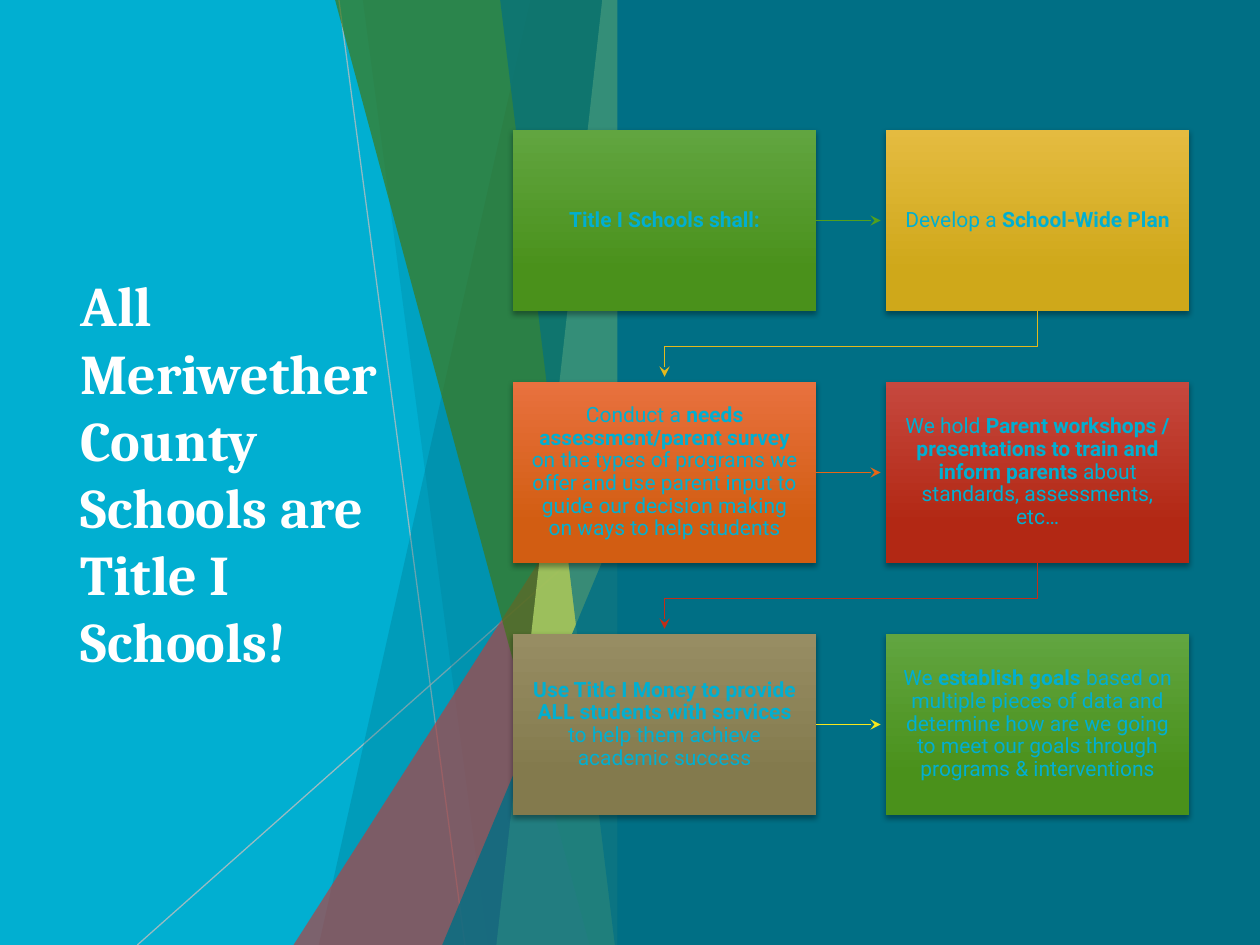
from dataclasses import dataclass

from lxml import etree
from pptx import Presentation
from pptx.dml.color import RGBColor
from pptx.enum.shapes import MSO_CONNECTOR as Conn, MSO_SHAPE as Shape
from pptx.enum.text import MSO_ANCHOR as Anchor, PP_ALIGN as Align
from pptx.oxml.ns import qn
from pptx.util import Inches, Pt

CYAN = RGBColor(0x01, 0xAF, 0xD1)
TEAL = RGBColor(0x00, 0x6F, 0x85)
WHITE = RGBColor(0xFF, 0xFF, 0xFF)
GRAY = RGBColor(0xBF, 0xBF, 0xBF)
ROSE = RGBColor(0xAF, 0x43, 0x45)
FOREST = RGBColor(0x3F, 0x78, 0x18)
LIME = RGBColor(0xBF, 0xE4, 0x71)
GREEN = RGBColor(0x52, 0xA0, 0x1E)
GREEN_TOP, GREEN_LOW = RGBColor(0x61, 0xA5, 0x40), RGBColor(0x4A, 0x91, 0x1B)
GOLD = RGBColor(0xE4, 0xB9, 0x1D)
GOLD_TOP, GOLD_LOW = RGBColor(0xE4, 0xBB, 0x40), RGBColor(0xCF, 0xA8, 0x1A)
ORANGE = RGBColor(0xE7, 0x66, 0x15)
ORANGE_TOP, ORANGE_LOW = RGBColor(0xE8, 0x71, 0x3E), RGBColor(0xD2, 0x5D, 0x12)
RED = RGBColor(0xC4, 0x2D, 0x17)
RED_TOP, RED_LOW = RGBColor(0xC6, 0x48, 0x3E), RGBColor(0xB2, 0x28, 0x14)
YELLOW = RGBColor(0xF8, 0xE7, 0x1C)
KHAKI_TOP, KHAKI_LOW = RGBColor(0x97, 0x8D, 0x63), RGBColor(0x83, 0x7A, 0x4D)

SLIDE_W, SLIDE_H = 10, 7.5
FACET_RIGHT = 5
BOX_W, BOX_H = 2.41, 1.44
GRID_LEFT, GRID_TOP = 4.07, 1.03
COL_STEP, ROW_STEP = 2.96, 2
ARROW_GAP = 0.04


@dataclass
class Ray:
    x1: float
    y1: float
    x2: float
    y2: float
    opacity: int


@dataclass
class Facet:
    """Band from a slanted left edge to the common right edge."""
    top_x: float
    bottom_x: float
    color: RGBColor
    opacity: int


@dataclass
class Spike:
    """Right triangle standing on the bottom of the slide."""
    left: float
    top: float
    color: RGBColor
    opacity: int


@dataclass
class Step:
    runs: list[tuple[str, bool]]
    top_color: RGBColor
    low_color: RGBColor
    arrow: RGBColor | None = None


RAYS = [Ray(2.69, 0, 3.69, 7.5, 74), Ray(5, 4.03, 1.09, 7.5, 80)]
BACKDROP = [
    Facet(4.21, 2.53, TEAL, 29),
    Facet(2.88, 3.87, TEAL, 20),
    Spike(2.33, 3.33, ROSE, 71),
    Facet(2.66, 4.68, FOREST, 69),
    Facet(4.78, 3.94, LIME, 69),
    Facet(3.97, 4.88, TEAL, 64),
    Spike(3.51, 3.93, TEAL, 80),
]
STEPS = [
    Step([("Title I Schools shall:", True)], GREEN_TOP, GREEN_LOW, GREEN),
    Step([("Develop a ", False), ("School-Wide Plan", True)], GOLD_TOP, GOLD_LOW, GOLD),
    Step([("Conduct a ", False), ("needs assessment/parent survey ", True),
          ("on the types of programs we offer and use parent input to guide "
           "our decision making on ways to help students", False)],
         ORANGE_TOP, ORANGE_LOW, ORANGE),
    Step([("We hold ", False),
          ("Parent workshops / presentations to train and inform parents", True),
          (" about standards, assessments, etc…", False)], RED_TOP, RED_LOW, RED),
    Step([("Use Title I Money to provide ALL students with services", True),
          (" to help them achieve academic success", False)],
         KHAKI_TOP, KHAKI_LOW, YELLOW),
    Step([("We ", False), ("establish goals", True),
          (" based on multiple pieces of data and determine how are we going "
           "to meet our goals through programs & interventions", False)],
         GREEN_TOP, GREEN_LOW),
]


def set_opacity(sp, percent: int) -> None:
    color = sp._element.spPr.find(".//" + qn("a:srgbClr"))
    etree.SubElement(color, qn("a:alpha"), val=str(percent * 1000))


def paint(sp, color: RGBColor, opacity: int = 100) -> None:
    sp.shadow.inherit = False
    sp.fill.solid()
    sp.fill.fore_color.rgb = color
    sp.line.fill.background()
    if opacity < 100:
        set_opacity(sp, opacity)


def add_path(s, points: list[tuple[float, float]], close: bool):
    emu = [(Inches(x), Inches(y)) for x, y in points]
    builder = s.shapes.build_freeform(*emu[0])
    builder.add_line_segments(emu[1:], close=close)
    return builder.convert_to_shape()


def add_line(s, x1: float, y1: float, x2: float, y2: float):
    line = s.shapes.add_connector(Conn.STRAIGHT, Inches(x1), Inches(y1), Inches(x2), Inches(y2))
    etree.SubElement(line._element.spPr, qn("a:effectLst"))
    return line


def add_ray(s, ray: Ray) -> None:
    line = add_line(s, ray.x1, ray.y1, ray.x2, ray.y2)
    line.line.color.rgb = GRAY
    line.line.width = Pt(0.75)
    set_opacity(line, ray.opacity)


def add_backdrop_piece(s, piece: Facet | Spike) -> None:
    if isinstance(piece, Facet):
        sp = add_path(s, [(piece.top_x, 0), (FACET_RIGHT, 0), (FACET_RIGHT, SLIDE_H),
                          (piece.bottom_x, SLIDE_H)], close=True)
    else:
        sp = s.shapes.add_shape(Shape.ISOSCELES_TRIANGLE, Inches(piece.left), Inches(piece.top),
                                Inches(FACET_RIGHT - piece.left), Inches(SLIDE_H - piece.top))
        sp.adjustments[0] = 1
    paint(sp, piece.color, piece.opacity)


def add_title(s, text: str) -> None:
    tf = s.shapes.add_textbox(Inches(0.54), Inches(1.51), Inches(2.91), Inches(4.48)).text_frame
    tf.word_wrap = True
    tf.vertical_anchor = Anchor.MIDDLE
    tf.text = text
    font = tf.paragraphs[0].runs[0].font
    font.name, font.size, font.bold = "Cambria", Pt(32), True
    font.color.rgb = WHITE


def add_box(s, step: Step, x: float, y: float):
    sp = s.shapes.add_shape(Shape.RECTANGLE, Inches(x), Inches(y), Inches(BOX_W), Inches(BOX_H))
    sp.line.fill.background()
    sp.fill.gradient()
    sp.fill.gradient_angle = 270
    for stop, color, pos in zip(sp.fill.gradient_stops, (step.top_color, step.low_color), (0, 0.78)):
        stop.color.rgb, stop.position = color, pos
    sp.shadow.inherit = False
    shadow = etree.SubElement(sp._element.spPr.find(qn("a:effectLst")), qn("a:outerShdw"),
                              blurRad=str(Pt(3)), dist=str(Pt(2)), dir="5400000", rotWithShape="0")
    etree.SubElement(shadow, qn("a:srgbClr"), val="000000")
    set_shadow = shadow.find(qn("a:srgbClr"))
    etree.SubElement(set_shadow, qn("a:alpha"), val="34000")

    tf = sp.text_frame
    tf.word_wrap = True
    tf.vertical_anchor = Anchor.MIDDLE
    tf.margin_left = tf.margin_right = tf.margin_top = tf.margin_bottom = Inches(0.12)
    p = tf.paragraphs[0]
    p.alignment, p.line_spacing = Align.CENTER, 0.9
    for text, bold in step.runs:
        r = p.add_run()
        r.text = text
        r.font.name, r.font.size, r.font.bold = "Roboto", Pt(12), bold
        r.font.color.rgb = CYAN
    return sp


def add_arrow(s, box, x: float, y: float, in_left_column: bool, color: RGBColor) -> None:
    """Point to the box on the right, or back to the start of the next row."""
    if in_left_column:
        mid_y = y + BOX_H / 2
        arrow = add_line(s, x + BOX_W, mid_y, x + COL_STEP - ARROW_GAP, mid_y)
        arrow.begin_connect(box, 3)
    else:
        start_x, start_y = x + BOX_W / 2, y + BOX_H
        end_x, end_y = start_x - COL_STEP, y + ROW_STEP - ARROW_GAP
        turn_y = (start_y + y + ROW_STEP) / 2
        arrow = add_path(s, [(start_x, start_y), (start_x, turn_y), (end_x, turn_y),
                             (end_x, end_y)], close=False)
        arrow.fill.background()
        arrow.shadow.inherit = False
    arrow.line.color.rgb = color
    arrow.line.width = Pt(1)
    etree.SubElement(arrow.line._get_or_add_ln(), qn("a:tailEnd"), type="stealth")


def main() -> None:
    prs = Presentation()
    prs.slide_width, prs.slide_height = Inches(SLIDE_W), Inches(SLIDE_H)
    s = prs.slides.add_slide(prs.slide_layouts[6])
    s.background.fill.solid()
    s.background.fill.fore_color.rgb = CYAN
    for ray in RAYS:
        add_ray(s, ray)
    for piece in BACKDROP:
        add_backdrop_piece(s, piece)
    panel = s.shapes.add_shape(Shape.RECTANGLE, Inches(4.9), 0, Inches(5.1), Inches(SLIDE_H))
    paint(panel, TEAL)
    add_title(s, "All Meriwether County Schools are Title I Schools!")
    for i, step in enumerate(STEPS):
        row, col = divmod(i, 2)
        x, y = GRID_LEFT + col * COL_STEP, GRID_TOP + row * ROW_STEP
        box = add_box(s, step, x, y)
        if step.arrow:
            add_arrow(s, box, x, y, col == 0, step.arrow)
    prs.save("out.pptx")


if __name__ == "__main__":
    main()
